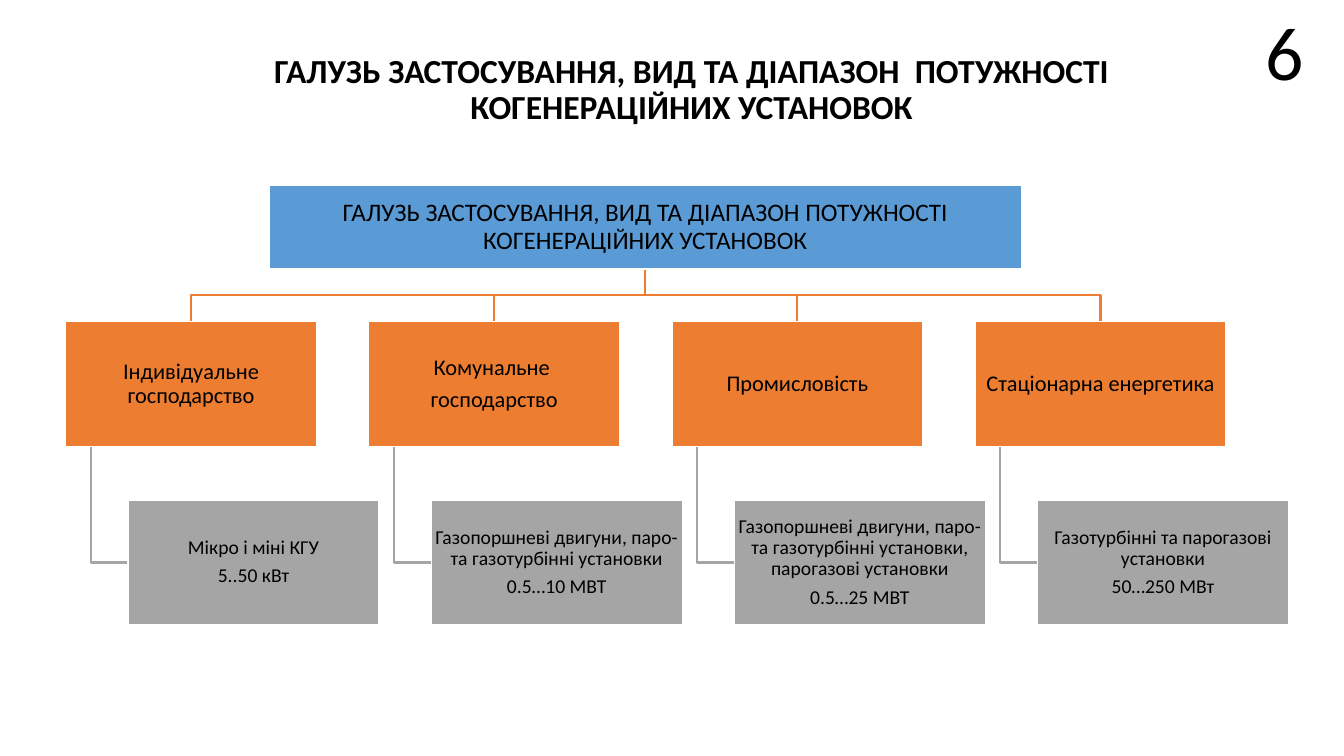
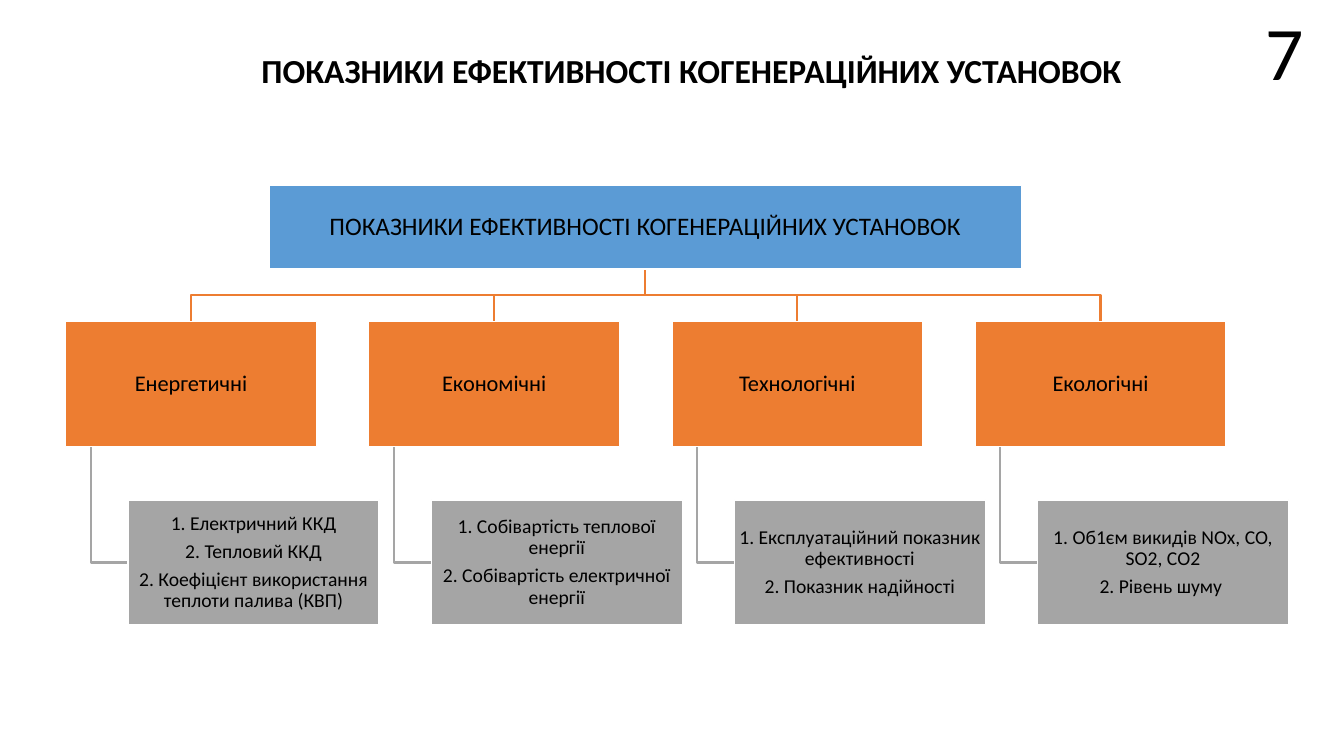
import pptx
import pptx.util
import pptx.dml.color
import pptx.enum.shapes
import pptx.enum.text

Inches = pptx.util.Inches
Pt = pptx.util.Pt
RGBColor = pptx.dml.color.RGBColor
ANCHOR = pptx.enum.text.MSO_ANCHOR
AUTO_SIZE = pptx.enum.text.MSO_AUTO_SIZE

# Shared style
FONT = "Calibri"
BLACK = RGBColor(0x00, 0x00, 0x00)
WHITE = RGBColor(0xFF, 0xFF, 0xFF)
BLUE = RGBColor(0x5B, 0x9B, 0xD5)
ORANGE = RGBColor(0xED, 0x7D, 0x31)
GRAY = RGBColor(0xA5, 0xA5, 0xA5)
TITLE_ONLY_LAYOUT = 5

# Chart geometry, in inches
ROOT_LEFT, ROOT_TOP, ROOT_WIDTH, ROOT_HEIGHT = 2.67, 1.84, 7.46, 0.83
BRANCH_LEFT, BRANCH_TOP, LAST_BRANCH_LEFT = 0.65, 3.19, 9.67
BOX_WIDTH, BOX_HEIGHT = 2.49, 1.24
DETAIL_INDENT, DETAIL_TOP = 0.62, 4.96
STEM_INDENT = 0.25

# Content: page number, title, root box, then (branch, details) pairs
PAGES = [
    ("6",
     "ГАЛУЗЬ ЗАСТОСУВАННЯ, ВИД ТА ДІАПАЗОН  ПОТУЖНОСТІ КОГЕНЕРАЦІЙНИХ УСТАНОВОК",
     "ГАЛУЗЬ ЗАСТОСУВАННЯ, ВИД ТА ДІАПАЗОН ПОТУЖНОСТІ КОГЕНЕРАЦІЙНИХ УСТАНОВОК",
     [("Індивідуальне господарство", "Мікро і міні КГУ\n5..50 кВт"),
      ("Комунальне \nгосподарство",
       "Газопоршневі двигуни, паро- та газотурбінні установки\n0.5…10 МВТ"),
      ("Промисловість",
       "Газопоршневі двигуни, паро- та газотурбінні установки, "
       "парогазові установки\n0.5…25 МВТ"),
      ("Стаціонарна енергетика",
       "Газотурбінні та парогазові установки\n50…250 МВт")]),
    ("7",
     "ПОКАЗНИКИ ЕФЕКТИВНОСТІ КОГЕНЕРАЦІЙНИХ УСТАНОВОК",
     "ПОКАЗНИКИ ЕФЕКТИВНОСТІ КОГЕНЕРАЦІЙНИХ УСТАНОВОК",
     [("Енергетичні",
       "1. Електричний ККД\n2. Тепловий ККД\n"
       "2. Коефіцієнт використання теплоти палива (КВП)"),
      ("Економічні",
       "1. Собівартість теплової енергії\n2. Собівартість електричної енергії"),
      ("Технологічні",
       "1. Експлуатаційний показник ефективності\n2. Показник надійності"),
      ("Екологічні",
       "1. Об1єм викидів NOx, CO, SO2, CO2\n2. Рівень шуму ")]),
]


def write_text(frame, text, *, size, bold=False, line_spacing=0.9,
               anchor=ANCHOR.TOP, wrap=True, inset=None):
    """Fill a frame with centred text, one paragraph per line."""
    frame.word_wrap = wrap
    frame.vertical_anchor = anchor
    if inset is not None:
        frame.margin_left = frame.margin_right = Inches(inset)
        frame.margin_top = frame.margin_bottom = Inches(inset)
    for index, line in enumerate(text.split("\n")):
        para = frame.add_paragraph() if index else frame.paragraphs[0]
        para.alignment = pptx.enum.text.PP_ALIGN.CENTER
        para.line_spacing = line_spacing
        if index:
            para.space_before = Pt(round(0.35 * size, 1))
        span = para.add_run()
        span.text = line
        span.font.name = FONT
        span.font.size = Pt(size)
        span.font.bold = bold
        span.font.color.rgb = BLACK


def place(shape, left, top, width, height):
    shape.left, shape.top = Inches(left), Inches(top)
    shape.width, shape.height = Inches(width), Inches(height)


def add_title(page, text):
    title = page.shapes.title
    place(title, 1.86, 0.49, 10, 1.16)
    title.text_frame.auto_size = AUTO_SIZE.NONE
    write_text(title.text_frame, text, size=24, bold=True)


def add_page_number(page, number):
    box = page.shapes.add_textbox(Inches(12.45), 0, Inches(0.59), Inches(1.01))
    write_text(box.text_frame, number, size=54, line_spacing=1.0, wrap=False)
    box.text_frame.auto_size = AUTO_SIZE.SHAPE_TO_FIT_TEXT


def add_box(page, text, left, top, width, height, fill, size):
    box = page.shapes.add_shape(
        pptx.enum.shapes.MSO_SHAPE.RECTANGLE,
        Inches(left), Inches(top), Inches(width), Inches(height))
    box.shadow.inherit = False
    box.fill.solid()
    box.fill.fore_color.rgb = fill
    box.line.color.rgb = WHITE
    box.line.width = Pt(1)
    write_text(box.text_frame, text, size=size, anchor=ANCHOR.MIDDLE, inset=0.01)


def add_elbow(page, points, color):
    """Draw an open line through points given in inches."""
    start, *rest = [(Inches(x), Inches(y)) for x, y in points]
    builder = page.shapes.build_freeform(*start)
    builder.add_line_segments(rest, close=False)
    elbow = builder.convert_to_shape()
    elbow.shadow.inherit = False
    elbow.fill.background()
    elbow.line.color.rgb = color
    elbow.line.width = Pt(1.5)


def add_hierarchy(page, root, branches):
    pitch = (LAST_BRANCH_LEFT - BRANCH_LEFT) / (len(branches) - 1)
    lefts = [BRANCH_LEFT + pitch * index for index in range(len(branches))]
    root_middle = ROOT_LEFT + ROOT_WIDTH / 2
    root_bottom = ROOT_TOP + ROOT_HEIGHT
    bar = (root_bottom + BRANCH_TOP) / 2
    detail_middle = DETAIL_TOP + BOX_HEIGHT / 2

    # Lines lie behind the boxes
    for left in lefts:
        branch_middle = left + BOX_WIDTH / 2
        stem = left + STEM_INDENT
        add_elbow(page, [(root_middle, root_bottom), (root_middle, bar),
                         (branch_middle, bar), (branch_middle, BRANCH_TOP)], ORANGE)
        add_elbow(page, [(stem, BRANCH_TOP + BOX_HEIGHT), (stem, detail_middle),
                         (left + DETAIL_INDENT, detail_middle)], GRAY)

    # Boxes
    add_box(page, root, ROOT_LEFT, ROOT_TOP, ROOT_WIDTH, ROOT_HEIGHT, BLUE, 18)
    for left, (branch, details) in zip(lefts, branches):
        add_box(page, branch, left, BRANCH_TOP, BOX_WIDTH, BOX_HEIGHT, ORANGE, 16)
        add_box(page, details, left + DETAIL_INDENT, DETAIL_TOP,
                BOX_WIDTH, BOX_HEIGHT, GRAY, 14)


def main():
    deck = pptx.Presentation()
    deck.slide_width, deck.slide_height = Inches(13.33), Inches(7.5)
    for number, title, root, branches in PAGES:
        page = deck.slides.add_slide(deck.slide_layouts[TITLE_ONLY_LAYOUT])
        add_title(page, title)
        add_hierarchy(page, root, branches)
        add_page_number(page, number)
    deck.save("out.pptx")


if __name__ == "__main__":
    main()
